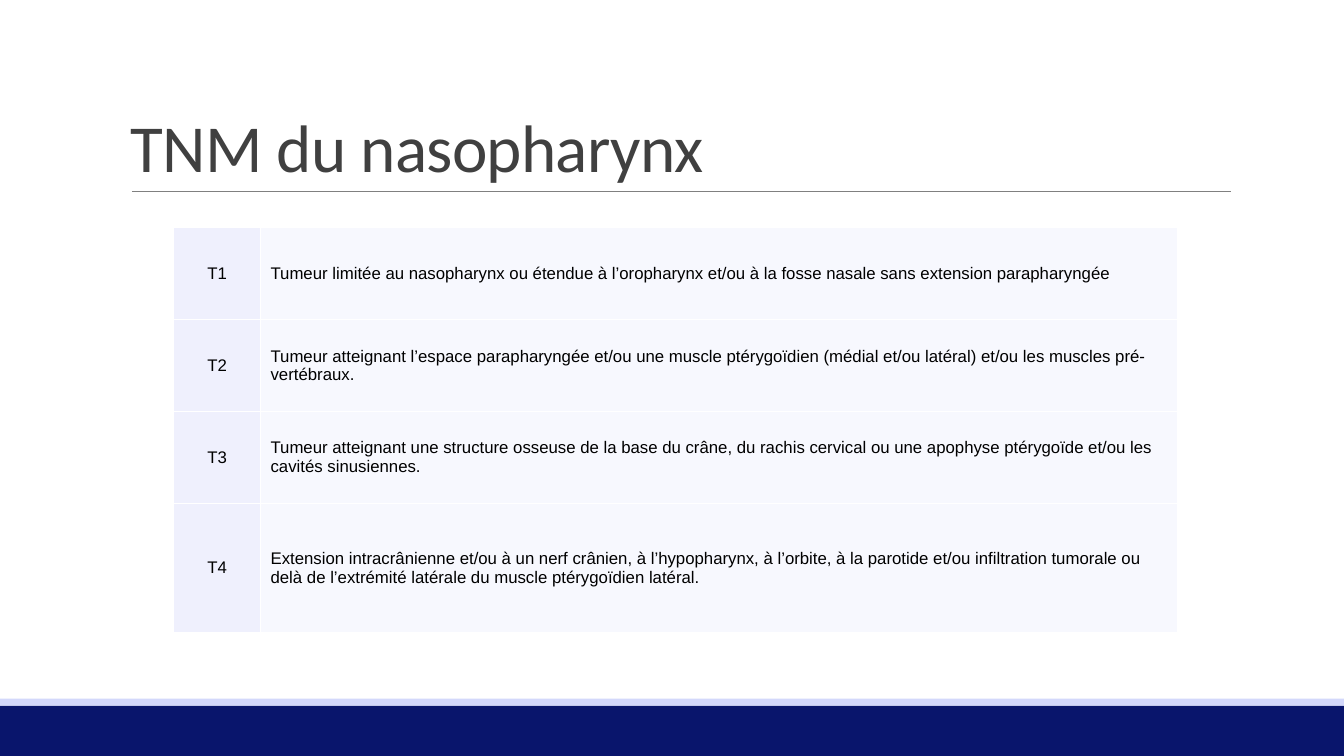
"""Build the slide on the T stages of nasopharynx tumours."""
import pptx
import pptx.util
import pptx.dml.color
import pptx.enum.shapes
import pptx.enum.text
import pptx.oxml
import pptx.oxml.ns

Pt = pptx.util.Pt
RGBColor = pptx.dml.color.RGBColor
PP_ALIGN = pptx.enum.text.PP_ALIGN
MSO_ANCHOR = pptx.enum.text.MSO_ANCHOR

NAVY = RGBColor(0x09, 0x15, 0x6C)
LAVENDER = RGBColor(0xD3, 0xD8, 0xFB)
GREY = RGBColor(0x80, 0x80, 0x80)
CHARCOAL = RGBColor(0x40, 0x40, 0x40)
BLACK = RGBColor(0, 0, 0)
WHITE = RGBColor(0xFF, 0xFF, 0xFF)
STAGE_FILL = RGBColor(0xEF, 0xF0, 0xFD)
CRITERION_FILL = RGBColor(0xF7, 0xF8, 0xFE)

STAGES = [
    ("T1", "Tumeur limitée au nasopharynx ou étendue à l’oropharynx et/ou à la fosse nasale "
           "sans extension parapharyngée"),
    ("T2", "Tumeur atteignant l’espace parapharyngée et/ou une muscle ptérygoïdien "
           "(médial et/ou latéral) et/ou les muscles pré-vertébraux."),
    ("T3", "Tumeur atteignant une structure osseuse de la base du crâne, du rachis cervical "
           "ou une apophyse ptérygoïde et/ou les cavités sinusiennes."),
    ("T4", "Extension intracrânienne et/ou à un nerf crânien, à l’hypopharynx, à l’orbite, "
           "à la parotide et/ou infiltration tumorale ou delà de l’extrémité latérale "
           "du muscle ptérygoïdien latéral."),
]
COLUMN_WIDTHS = [62, 654.8]
ROW_HEIGHTS = [65.7, 65.7, 65.7, 92]
COLUMN_STYLES = [(PP_ALIGN.CENTER, STAGE_FILL), (PP_ALIGN.LEFT, CRITERION_FILL)]


def add_border(cell, position, side):
    border = pptx.oxml.parse_xml(
        f'<a:{side} {pptx.oxml.ns.nsdecls("a")} w="{Pt(1)}">'
        f'<a:solidFill><a:srgbClr val="{WHITE}"/></a:solidFill></a:{side}>')
    cell._tc.get_or_add_tcPr().insert(position, border)


deck = pptx.Presentation()
deck.slide_width = Pt(960)
deck.slide_height = Pt(540)
slide = deck.slides.add_slide(deck.slide_layouts[6])

for top, height, color in [(504, 36, NAVY), (499, 5, LAVENDER)]:
    footer_band = slide.shapes.add_shape(
        pptx.enum.shapes.MSO_SHAPE.RECTANGLE, 0, Pt(top), Pt(960), Pt(height))
    footer_band.shadow.inherit = False
    footer_band.fill.solid()
    footer_band.fill.fore_color.rgb = color
    footer_band.line.fill.background()

title_rule = slide.shapes.add_connector(
    pptx.enum.shapes.MSO_CONNECTOR.STRAIGHT, Pt(94.3), Pt(136.8), Pt(879), Pt(136.8))
title_rule.line.color.rgb = GREY
title_rule.line.width = Pt(0.5)
title_rule._element.spPr.append(
    pptx.oxml.parse_xml(f'<a:effectLst {pptx.oxml.ns.nsdecls("a")}/>'))

title = slide.shapes.add_textbox(Pt(86.4), Pt(22.5), Pt(792), Pt(114.2))
title.text_frame.word_wrap = True
title.text_frame.vertical_anchor = MSO_ANCHOR.BOTTOM
title.text_frame.text = "TNM du nasopharynx"
heading = title.text_frame.paragraphs[0]
heading.line_spacing = 0.85
heading_run = heading.runs[0]
heading_run.font.size = Pt(48)
heading_run.font.name = "Calibri"
heading_run.font.color.rgb = CHARCOAL
heading_run.font._element.set("spc", "-50")

staging = slide.shapes.add_table(
    len(STAGES), len(COLUMN_WIDTHS), Pt(124.1), Pt(162.6),
    Pt(sum(COLUMN_WIDTHS)), Pt(sum(ROW_HEIGHTS))).table
staging.first_row = False
staging.horz_banding = False
for column, width in zip(staging.columns, COLUMN_WIDTHS):
    column.width = Pt(width)
for row, height, texts in zip(staging.rows, ROW_HEIGHTS, STAGES):
    row.height = Pt(height)
    for cell, text, (alignment, fill) in zip(row.cells, texts, COLUMN_STYLES):
        cell.text_frame.text = text
        cell.vertical_anchor = MSO_ANCHOR.MIDDLE
        cell.fill.solid()
        cell.fill.fore_color.rgb = fill
        paragraph = cell.text_frame.paragraphs[0]
        paragraph.alignment = alignment
        run = paragraph.runs[0]
        run.font.size = Pt(12)
        run.font.name = "Arial"
        run.font.color.rgb = BLACK
        for position, side in enumerate(["lnL", "lnR", "lnT", "lnB"]):
            add_border(cell, position, side)

deck.save("out.pptx")
